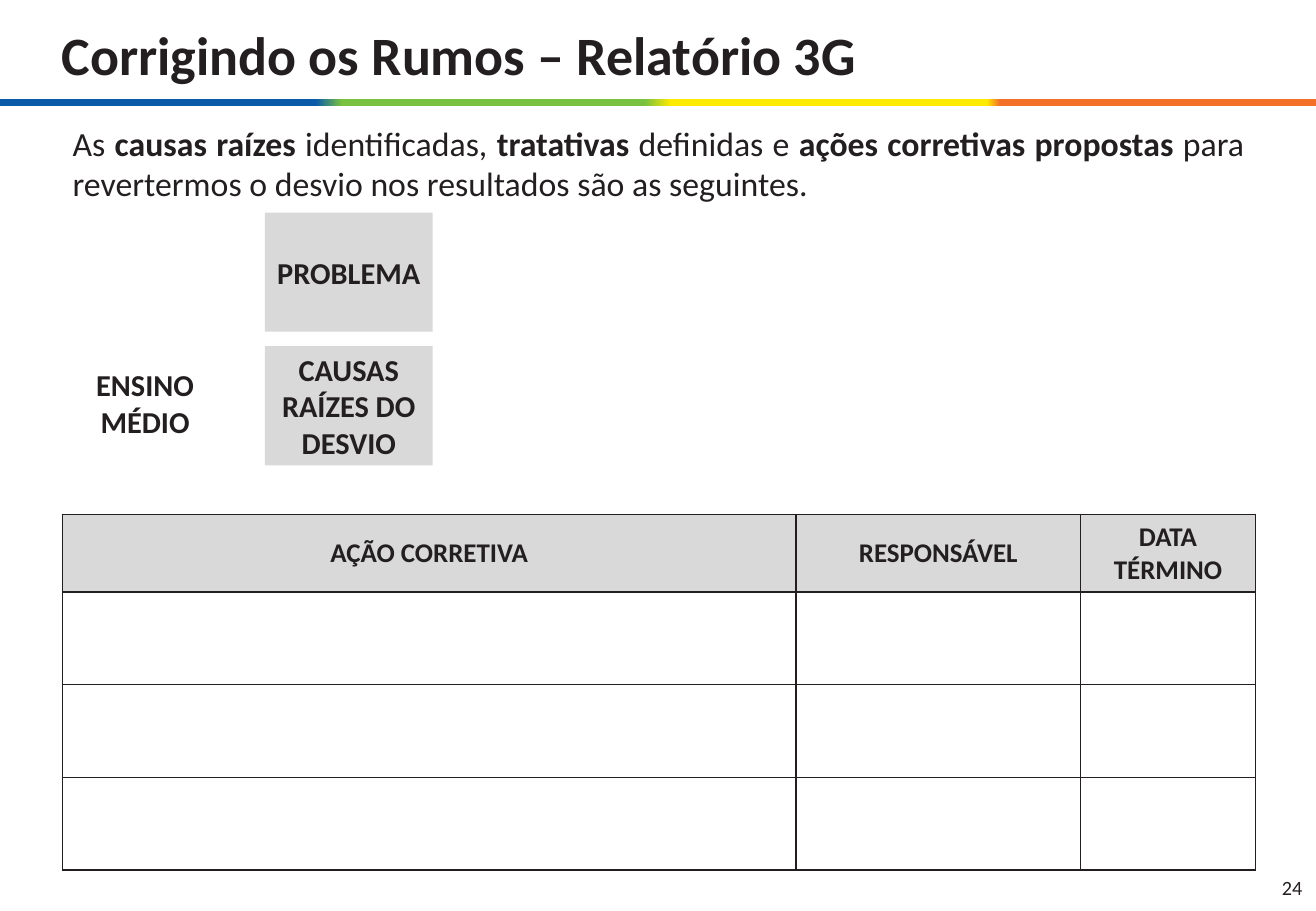
from lxml import etree
from pptx import Presentation
from pptx.dml.color import RGBColor
from pptx.enum.shapes import MSO_SHAPE
from pptx.enum.text import MSO_ANCHOR, PP_ALIGN
from pptx.oxml import parse_xml
from pptx.oxml.ns import nsdecls, qn
from pptx.util import Pt

INK, GREY = "231F20", "D9D9D9"
BAR_STOPS = [(0, "0A5AAA"), (24, "0A5AAA"), (26, "78C240"), (49, "78C240"),
             (51, "FFEA01"), (75, "FFEA01"), (76, "F37029"), (100, "F37029")]


def rgb(value):
    return RGBColor.from_string(value)


class SlideBuilder:
    font = "Calibri"

    def __init__(self, slide):
        self.slide = slide

    def add_runs(self, tf, paragraphs, size, align=PP_ALIGN.LEFT, anchor=MSO_ANCHOR.MIDDLE, wrap=True):
        """Fill a frame with paragraphs, each a list of (text, bold) runs."""
        tf.word_wrap = wrap
        tf.vertical_anchor = anchor
        for i, runs in enumerate(paragraphs):
            p = tf.add_paragraph() if i else tf.paragraphs[0]
            p.alignment = align
            for text, bold in runs:
                r = p.add_run()
                r.text = text
                r.font.name, r.font.size, r.font.bold = self.font, Pt(size), bold
                r.font.color.rgb = rgb(INK)

    def text(self, box, paragraphs, size, **style):
        sp = self.slide.shapes.add_textbox(*map(Pt, box))
        self.add_runs(sp.text_frame, paragraphs, size, **style)

    def rect(self, box):
        sp = self.slide.shapes.add_shape(MSO_SHAPE.RECTANGLE, *map(Pt, box))
        sp.shadow.inherit = False
        sp.line.fill.background()
        return sp

    def label(self, box, text, wrap):
        sp = self.rect(box)
        sp.fill.solid()
        sp.fill.fore_color.rgb = rgb(GREY)
        self.add_runs(sp.text_frame, [[(text, True)]], 18, align=PP_ALIGN.CENTER, wrap=wrap)

    def gradient_bar(self, box, stops):
        sp = self.rect(box)
        sp.fill.gradient()
        sp.fill.gradient_angle = 0
        stop_list = sp._element.spPr.find(qn("a:gradFill")).find(qn("a:gsLst"))
        for old in list(stop_list):
            stop_list.remove(old)
        for percent, color in stops:
            stop = etree.SubElement(stop_list, qn("a:gs"), pos=str(percent * 1000))
            etree.SubElement(stop, qn("a:srgbClr"), val=color)

    def border(self, cell):
        for i, side in enumerate("LRTB"):
            cell._tc.get_or_add_tcPr().insert(i, parse_xml(
                f'<a:ln{side} {nsdecls("a")} w="{Pt(1)}"><a:solidFill>'
                f'<a:srgbClr val="{INK}"/></a:solidFill></a:ln{side}>'))

    def table(self, left, top, widths, heights, headers):
        table = self.slide.shapes.add_table(
            len(heights), len(widths), Pt(left), Pt(top),
            Pt(sum(widths)), Pt(sum(heights))).table
        table.first_row = table.horz_banding = False
        for column, width in zip(table.columns, widths):
            column.width = Pt(width)
        for row, height in zip(table.rows, heights):
            row.height = Pt(height)
        for cell in table.iter_cells():
            cell.fill.background()
            self.border(cell)
        for cell, header in zip(table.rows[0].cells, headers):
            cell.fill.solid()
            cell.fill.fore_color.rgb = rgb(GREY)
            cell.vertical_anchor = MSO_ANCHOR.MIDDLE
            self.add_runs(cell.text_frame, [[(header, True)]], 16, align=PP_ALIGN.CENTER)


def main():
    prs = Presentation()
    prs.slide_width, prs.slide_height = Pt(780), Pt(540)
    s = SlideBuilder(prs.slides.add_slide(prs.slide_layouts[6]))

    s.gradient_bar((0, 58.6, 780, 4.6), BAR_STOPS)
    s.text((29.5, 3.6, 609, 57), [[("Corrigindo os Rumos – Relatório 3G", True)]], 32)
    s.text((36, 69, 708.5, 113), [[
        ("As ", False), ("causas raízes", True), (" identificadas, ", False),
        ("tratativas ", True), ("definidas e ", False),
        ("ações corretivas propostas ", True),
        ("para revertermos o desvio nos resultados são as seguintes.", False),
    ]], 20, align=PP_ALIGN.JUSTIFY, anchor=MSO_ANCHOR.TOP)

    s.text((48.2, 210.2, 75.6, 57), [[("ENSINO", True)], [("MÉDIO", True)]], 18,
           align=PP_ALIGN.CENTER, wrap=False)
    labels = [("PROBLEMA", False), ("CAUSAS RAÍZES DO DESVIO", True)]
    for i, (text, wrap) in enumerate(labels):
        s.label((157, 126 + 79.2 * i, 99.4, 70.6), text, wrap)

    s.table(36.9, 304.8, [435, 168.6, 103.7], [46.2] + [54.9] * 3,
            ["AÇÃO CORRETIVA", "RESPONSÁVEL", "DATA TÉRMINO"])
    s.text((730, 512, 49, 28), [[("24", False)]], 12, align=PP_ALIGN.RIGHT, wrap=False)
    prs.save("out.pptx")


if __name__ == "__main__":
    main()
